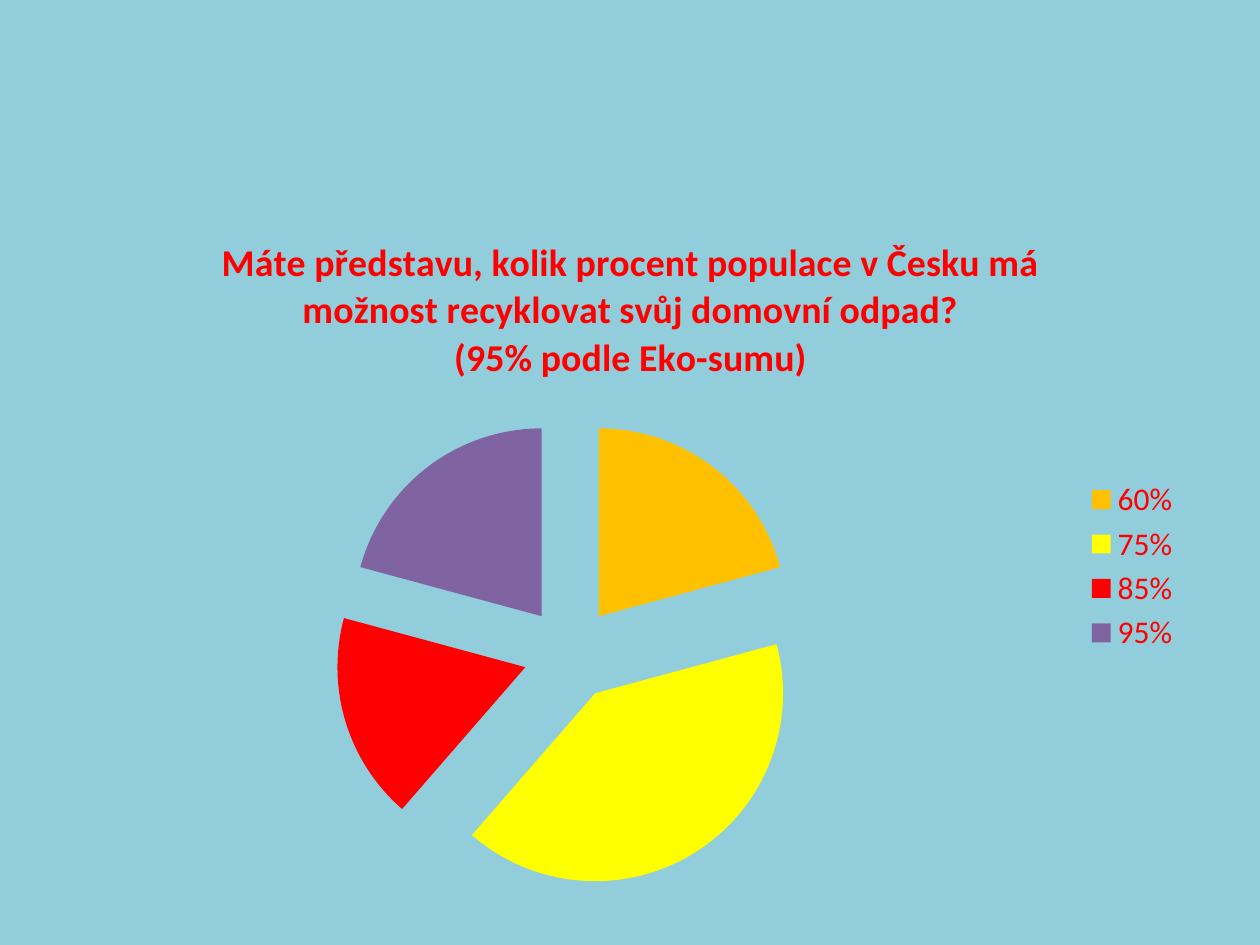
from dataclasses import dataclass

from lxml import etree
from pptx import Presentation
from pptx.chart.data import CategoryChartData
from pptx.dml.color import RGBColor
from pptx.enum.chart import XL_CHART_TYPE, XL_LEGEND_POSITION
from pptx.oxml.ns import qn
from pptx.util import Cm, Pt

PIE = XL_CHART_TYPE.PIE
RIGHT = XL_LEGEND_POSITION.RIGHT
BLANK_LAYOUT = 6
BACKGROUND = "92CDDC"
RED = "FF0000"
EXPLOSION = 25
TITLE_PLACE = {"xMode": "edge", "yMode": "edge", "x": 0.14, "y": 0.01}
TITLE_LINES = (
    "Máte představu, kolik procent populace v Česku má možnost recyklovat svůj domovní odpad?",
    "(95% podle Eko-sumu)",
)


@dataclass
class Slice:
    label: str
    value: int
    color: str


SLICES = (
    Slice("60%", 21, "FFC000"),
    Slice("75%", 41, "FFFF00"),
    Slice("85%", 18, RED),
    Slice("95%", 21, "8064A2"),
)


def paint(fill, color: str) -> None:
    fill.solid()
    fill.fore_color.rgb = RGBColor.from_string(color)


def style_font(font, color: str, **values) -> None:
    font.color.rgb = RGBColor.from_string(color)
    for name, value in ({"name": "Calibri"} | values).items():
        setattr(font, name, value)


def place_title(title) -> None:
    """Fix the title's top left corner as fractions of the chart area."""
    element = title._element
    layout = element.find(qn("c:layout"))
    if layout is None:
        layout = etree.Element(qn("c:layout"))
        element.find(qn("c:tx")).addnext(layout)
    manual = etree.SubElement(layout, qn("c:manualLayout"))
    for name, value in TITLE_PLACE.items():
        etree.SubElement(manual, qn(f"c:{name}"), val=str(value))


def add_title(chart) -> None:
    title = chart.chart_title
    title.include_in_layout = False
    frame = title.text_frame
    for index, line in enumerate(TITLE_LINES):
        para = frame.add_paragraph() if index else frame.paragraphs[0]
        span = para.add_run()
        span.text = line
        style_font(span.font, RED, size=Pt(21.6), bold=True)
    place_title(title)


def add_legend(chart) -> None:
    chart.has_legend = True
    legend = chart.legend
    legend.position = RIGHT
    legend.include_in_layout = False
    style_font(legend.font, RED, size=Pt(18))


def explode(series, percent: int) -> None:
    """Move every slice of the series away from the centre."""
    explosion = etree.Element(qn("c:explosion"), val=str(percent))
    series._element.find(qn("c:tx")).addnext(explosion)


def add_pie(page, slices: tuple[Slice, ...]) -> None:
    data = CategoryChartData()
    data.categories = [item.label for item in slices]
    data.add_series("Series 1", [item.value for item in slices])
    box = page.shapes.add_chart(PIE, Cm(1.19), Cm(4.57), Cm(22.86), Cm(13.69), data)
    chart = box.chart
    style_font(chart.font, "92D050", size=Pt(18))
    add_title(chart)
    add_legend(chart)
    plot = chart.plots[0]
    plot.vary_by_categories = True
    series = plot.series[0]
    explode(series, EXPLOSION)
    for index, item in enumerate(slices):
        paint(series.points[index].format.fill, item.color)


def main() -> None:
    deck = Presentation()
    deck.slide_width, deck.slide_height = Cm(25.4), Cm(19.05)
    page = deck.slides.add_slide(deck.slide_layouts[BLANK_LAYOUT])
    paint(page.background.fill, BACKGROUND)
    add_pie(page, SLICES)
    deck.save("out.pptx")


if __name__ == "__main__":
    main()
